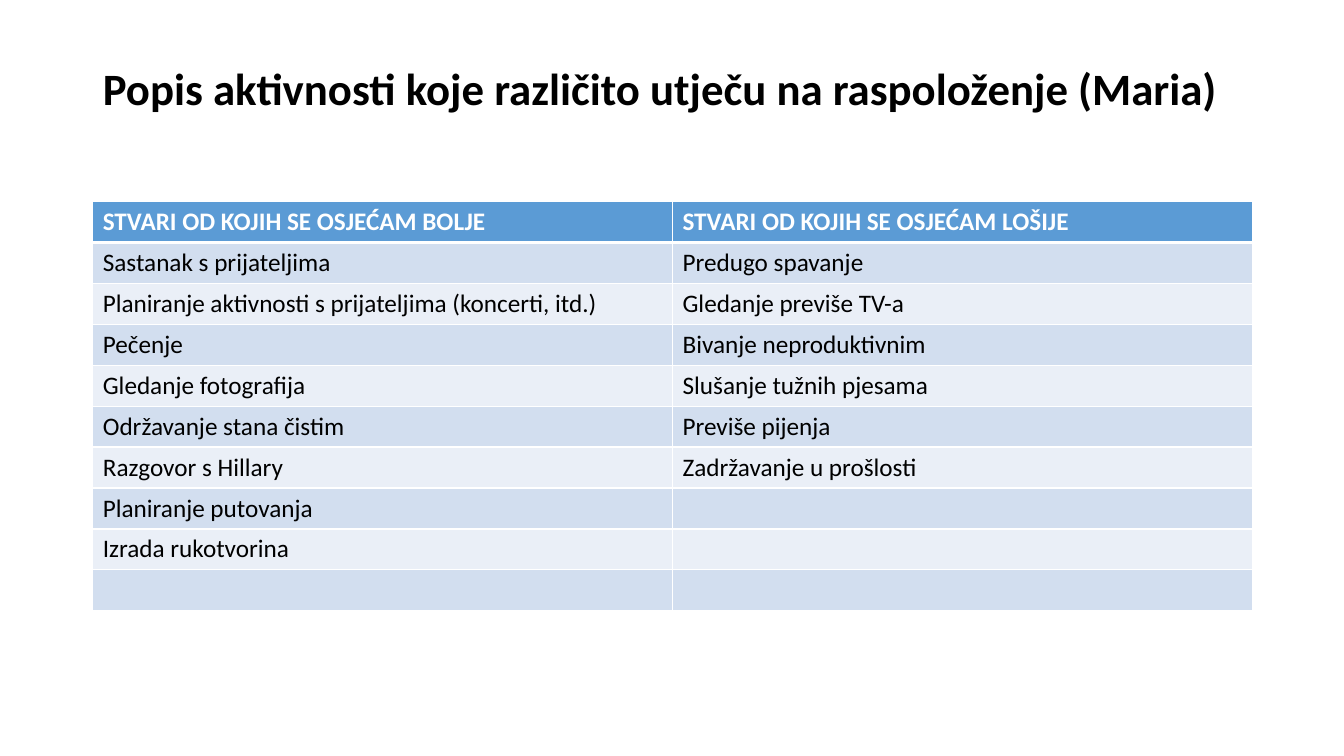
from itertools import zip_longest

from lxml import etree
from pptx import Presentation
from pptx.dml.color import RGBColor
from pptx.enum.text import MSO_ANCHOR, MSO_AUTO_SIZE, PP_ALIGN
from pptx.oxml.ns import qn
from pptx.util import Inches, Pt

LEFT = PP_ALIGN.LEFT
MIDDLE = MSO_ANCHOR.MIDDLE
NO_AUTOFIT = MSO_AUTO_SIZE.NONE
TITLE_ONLY = 5

BLACK = RGBColor(0x00, 0x00, 0x00)
WHITE = RGBColor(0xFF, 0xFF, 0xFF)
HEADER_BLUE = RGBColor(0x5B, 0x9B, 0xD5)
BAND_DARK = RGBColor(0xD2, 0xDE, 0xEF)
BAND_LIGHT = RGBColor(0xEA, 0xEF, 0xF7)

FONT = "Calibri"
CONTENT_LEFT = Inches(0.92)
CONTENT_WIDTH = Inches(11.5)

TITLE = "Popis aktivnosti koje različito utječu na raspoloženje (Maria)"
HEADERS = ("STVARI OD KOJIH SE OSJEĆAM BOLJE", "STVARI OD KOJIH SE OSJEĆAM LOŠIJE")
BETTER = (
    "Sastanak s prijateljima",
    "Planiranje aktivnosti s prijateljima (koncerti, itd.)",
    "Pečenje",
    "Gledanje fotografija",
    "Održavanje stana čistim",
    "Razgovor s Hillary",
    "Planiranje putovanja",
    "Izrada rukotvorina",
)
WORSE = (
    "Predugo spavanje",
    "Gledanje previše TV-a",
    "Bivanje neproduktivnim",
    "Slušanje tužnih pjesama",
    "Previše pijenja",
    "Zadržavanje u prošlosti",
)


def format_font(font, size, color, bold):
    font.name = FONT
    font.size = Pt(size)
    font.color.rgb = color
    font.bold = bold


def set_title(slide):
    title = slide.shapes.title
    title.left, title.top = CONTENT_LEFT, Inches(0.4)
    title.width, title.height = CONTENT_WIDTH, Inches(1.01)
    frame = title.text_frame
    frame.text = TITLE
    frame.word_wrap = True
    frame.auto_size = NO_AUTOFIT
    frame.vertical_anchor = MIDDLE
    paragraph = frame.paragraphs[0]
    paragraph.alignment = LEFT
    paragraph.line_spacing = 0.9
    format_font(paragraph.font, 32, BLACK, True)


def set_borders(cell, top, bottom):
    """Draw white cell borders; top and bottom are widths in points."""
    properties = cell._tc.get_or_add_tcPr()
    for side, width in (("lnL", 1), ("lnR", 1), ("lnT", top), ("lnB", bottom)):
        line = etree.SubElement(properties, qn(f"a:{side}"), w=str(Pt(width)))
        fill = etree.SubElement(line, qn("a:solidFill"))
        etree.SubElement(fill, qn("a:srgbClr"), val=str(WHITE))


def row_fill(row_index):
    if row_index == 0:
        return HEADER_BLUE
    return BAND_DARK if row_index % 2 else BAND_LIGHT


def add_activity_table(slide):
    rows = [HEADERS, *zip_longest(BETTER, WORSE, fillvalue=""), ("", "")]
    table = slide.shapes.add_table(
        len(rows), len(HEADERS), CONTENT_LEFT, Inches(2), CONTENT_WIDTH, Inches(4.06)
    ).table
    for row_index, texts in enumerate(rows):
        is_header = row_index == 0
        for column_index, text in enumerate(texts):
            cell = table.cell(row_index, column_index)
            set_borders(cell, 3 if row_index == 1 else 1, 3 if is_header else 1)
            cell.fill.solid()
            cell.fill.fore_color.rgb = row_fill(row_index)
            cell.text = text
            color = WHITE if is_header else BLACK
            format_font(cell.text_frame.paragraphs[0].font, 18, color, is_header)


def main():
    presentation = Presentation()
    presentation.slide_width = Inches(13.33)
    presentation.slide_height = Inches(7.5)
    slide = presentation.slides.add_slide(presentation.slide_layouts[TITLE_ONLY])
    set_title(slide)
    add_activity_table(slide)
    presentation.save("out.pptx")


if __name__ == "__main__":
    main()
